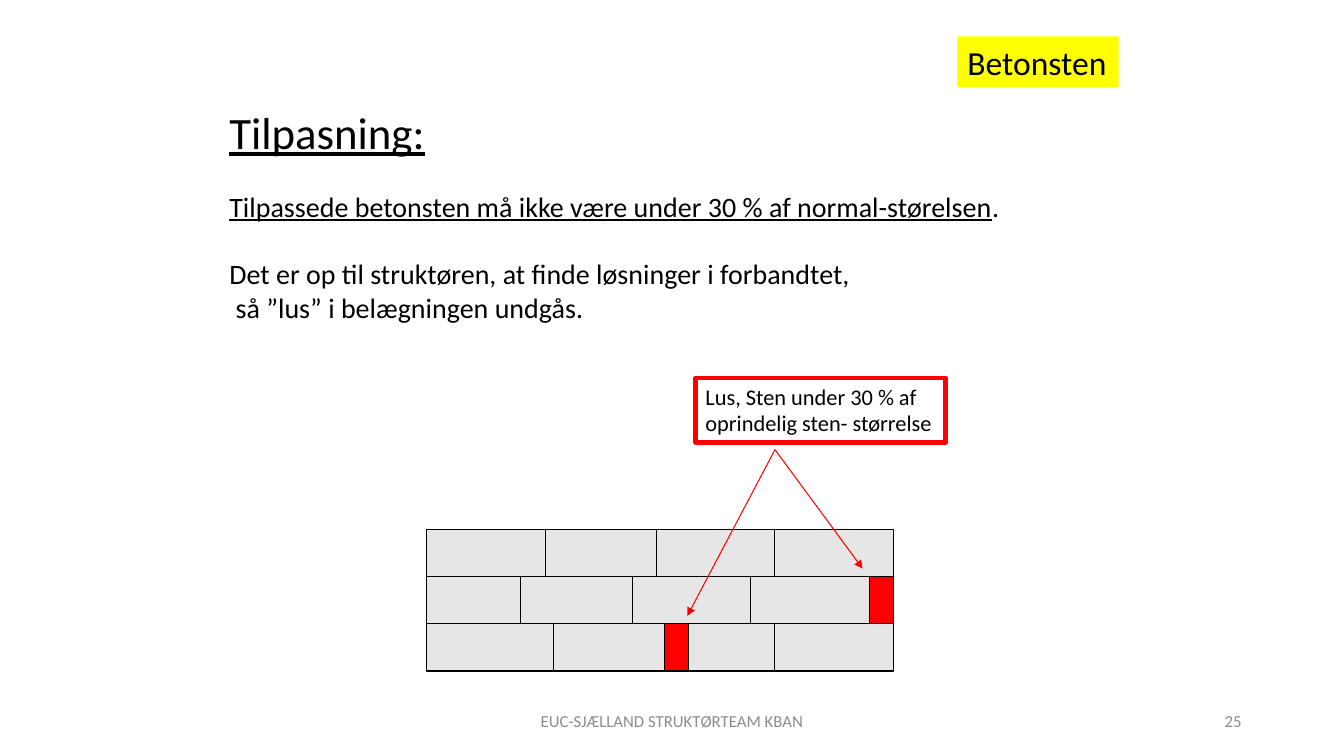
"""Build the slide on fitting concrete paving stones."""
from dataclasses import dataclass

from lxml import etree
from pptx import Presentation
from pptx.dml.color import RGBColor
from pptx.enum.shapes import MSO_CONNECTOR, MSO_SHAPE
from pptx.enum.text import MSO_ANCHOR, PP_ALIGN
from pptx.oxml.ns import qn
from pptx.util import Cm, Pt

RECT, LINE = MSO_SHAPE.RECTANGLE, MSO_CONNECTOR.STRAIGHT
TOP, MID = MSO_ANCHOR.TOP, MSO_ANCHOR.MIDDLE
LEFT, CENTER, RIGHT = PP_ALIGN.LEFT, PP_ALIGN.CENTER, PP_ALIGN.RIGHT


@dataclass
class Theme:
    font: str = "Calibri"
    ink: str = "000000"
    muted: str = "8C8C8C"
    mark: str = "FFFF00"
    stone: str = "E7E6E6"
    alert: str = "FF0000"
    title: int = 32
    label: int = 24
    body: int = 20
    note: int = 16
    foot: int = 12


theme = Theme()
deck = Presentation()
deck.slide_width, deck.slide_height = Cm(33.87), Cm(19.05)
slide = deck.slides.add_slide(deck.slide_layouts[6])


def add_box(place, fill=None, edge=None, width=0.75):
    box = slide.shapes.add_shape(RECT, *map(Cm, place))
    box.shadow.inherit = False
    for part, color in ((box.fill, fill), (box.line.fill, edge)):
        if color:
            part.solid()
            part.fore_color.rgb = RGBColor.from_string(color)
        else:
            part.background()
    if edge:
        box.line.width = Pt(width)
    return box


def add_text(box, paras, color=theme.ink, align=LEFT, anchor=TOP):
    frame = box.text_frame
    frame.word_wrap = True
    frame.vertical_anchor = anchor
    if align == LEFT:
        frame.margin_right = 0
    for i, (size, gap, runs) in enumerate(paras):
        para = frame.paragraphs[0] if i == 0 else frame.add_paragraph()
        para.alignment = align
        para.space_before = Pt(gap)
        for words, under in runs:
            run = para.add_run()
            run.text = words
            look = {"name": theme.font, "size": Pt(size), "underline": under}
            for key, value in look.items():
                setattr(run.font, key, value)
            run.font.color.rgb = RGBColor.from_string(color)
    return frame


feet = [
    ((11.22, 17.66, 11.43, 1.01), "EUC-SJÆLLAND STRUKTØRTEAM KBAN", CENTER),
    ((23.92, 17.66, 7.62, 1.01), "25", RIGHT),
]
for place, words, align in feet:
    foot = slide.shapes.add_textbox(*map(Cm, place))
    add_text(foot, [(theme.foot, 0, [(words, False)])], theme.muted, align, MID)

label = add_box((24.13, 0.92, 4.06, 1.28), theme.mark)
add_text(label, [(theme.label, 0, [("Betonsten", False)])])

body = slide.shapes.add_textbox(Cm(5.53), Cm(2.51), Cm(20.1), Cm(10))
frame = add_text(body, [
    (theme.title, 0, [("Tilpasning:", True)]),
    (theme.body, 22, [
        ("Tilpassede betonsten må ikke være under 30 % af normal-størelsen", True),
        (".", False)]),
    (theme.body, 24.4, [
        ("Det er op til struktøren, at finde løsninger i forbandtet,", False)]),
    (theme.body, 0, [("så ”lus” i belægningen undgås.", False)]),
])
frame.paragraphs[-1]._p.get_or_add_pPr().set("marL", str(Cm(0.16)))

note = add_box((17.53, 9.52, 6.3, 1.63), None, theme.alert, 3)
add_text(note, [
    (theme.note, 0, [("Lus, Sten under 30 % af", False)]),
    (theme.note, 0, [("oprindelig sten- størrelse", False)]),
])

wall, top, full, high = 10.74, 13.34, 3, 1.19
stone, alert = theme.stone, theme.alert
rows = [
    [(wall, full, stone), (13.74, full, stone), (16.54, full, stone),
     (19.53, full, stone)],
    [(wall, 2.39, stone), (13.13, full, stone), (15.93, full, stone),
     (18.92, full, stone), (21.92, 0.61, alert)],
    [(wall, 3.2, stone), (13.94, full, stone), (16.74, full, stone),
     (16.74, 0.61, alert), (19.53, full, stone)],
]
for i, row in enumerate(rows):
    for left, wide, color in row:
        add_box((left, top + i * high, wide, high), color, theme.ink)

start = (19.53, 11.33)
for end in ((21.74, 14.33), (17.32, 15.52)):
    arrow = slide.shapes.add_connector(LINE, *map(Cm, start + end))
    arrow.line.color.rgb = RGBColor.from_string(theme.alert)
    arrow.line.width = Pt(0.75)
    etree.SubElement(arrow.line._get_or_add_ln(), qn("a:tailEnd"), type="triangle")
    etree.SubElement(arrow._element.spPr, qn("a:effectLst"))

deck.save("out.pptx")
